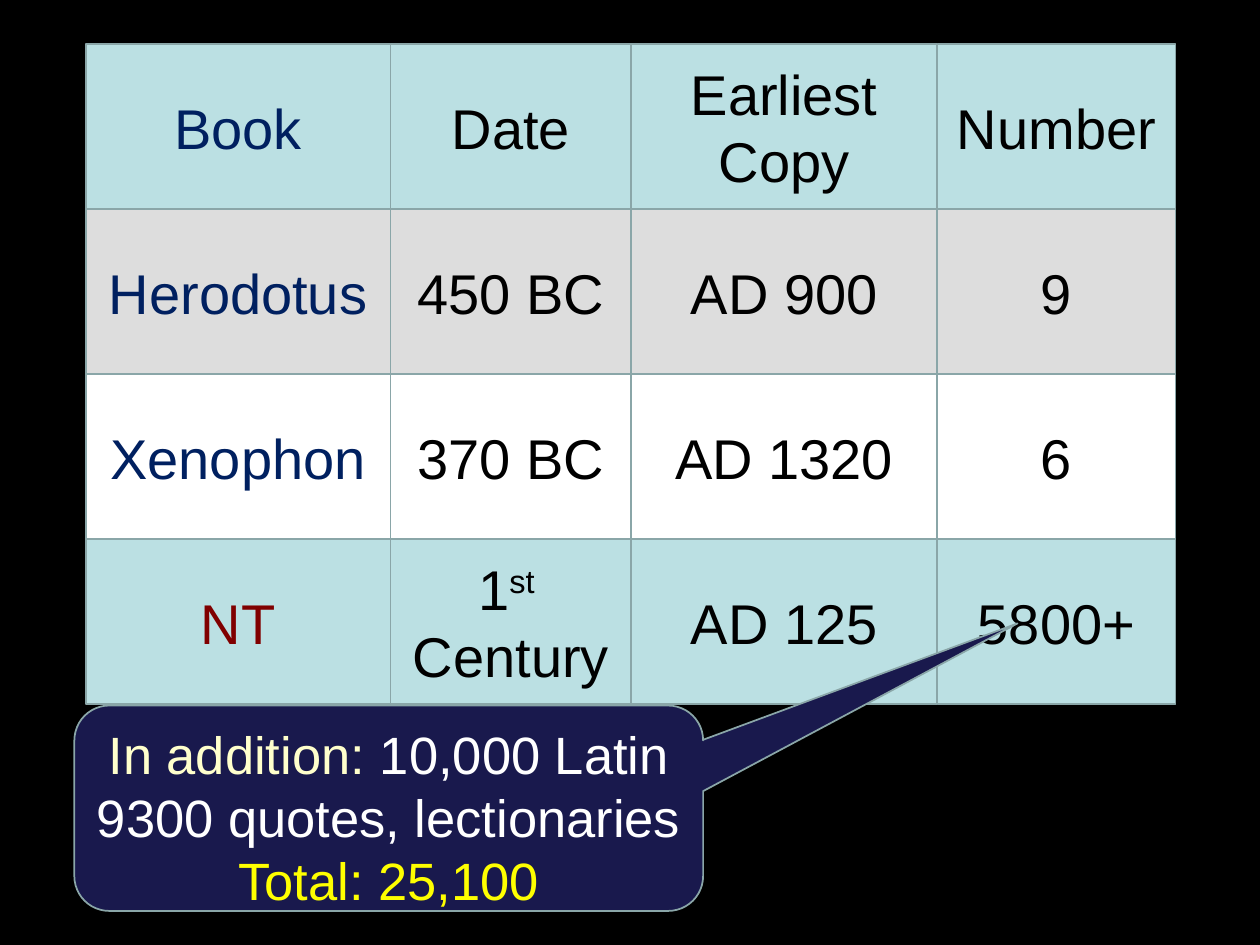
from itertools import accumulate

from pptx import Presentation
from pptx.dml.color import RGBColor
from pptx.enum.shapes import MSO_SHAPE
from pptx.enum.text import MSO_ANCHOR, PP_ALIGN
from pptx.util import Inches, Pt

COLORS = {
    "background": "000000", "teal": "BBE0E3", "gray": "DDDDDD", "white": "FFFFFF",
    "border": "8AA6A8", "black": "000000", "navy": "002060", "maroon": "800000",
    "callout": "19194D", "cream": "FFFFCC", "yellow": "FFFF00",
}


def rgb(name):
    return RGBColor.from_string(COLORS[name])


class SlideBuilder:
    """Holds the text style and the current slide."""

    font_name = "Arial"

    def __init__(self, slide):
        self.slide = slide

    def background(self, color):
        fill = self.slide.background.fill
        fill.solid()
        fill.fore_color.rgb = rgb(color)

    def box(self, kind, left, top, width, height, fill, anchor, margin=0.1):
        shape = self.slide.shapes.add_shape(
            kind, Inches(left), Inches(top), Inches(width), Inches(height))
        shape.shadow.inherit = False
        shape.fill.solid()
        shape.fill.fore_color.rgb = rgb(fill)
        shape.line.color.rgb = rgb("border")
        shape.line.width = Pt(1)
        frame_format = {
            "word_wrap": True, "vertical_anchor": anchor,
            "margin_left": Inches(margin), "margin_right": Inches(margin),
        }
        for name, value in frame_format.items():
            setattr(shape.text_frame, name, value)
        return shape

    def text(self, shape, lines, size):
        """Each line is a list of (text, color, baseline); text "\\n" breaks the line."""
        frame = shape.text_frame
        for index, runs in enumerate(lines):
            paragraph = frame.add_paragraph() if index else frame.paragraphs[0]
            paragraph.alignment = PP_ALIGN.CENTER
            for content, color, baseline in runs:
                if content == "\n":
                    paragraph.add_line_break()
                    continue
                run = paragraph.add_run()
                run.text = content
                font_format = {"name": self.font_name, "size": Pt(size)}
                for name, value in font_format.items():
                    setattr(run.font, name, value)
                run.font.color.rgb = rgb(color)
                if baseline:
                    run._r.get_or_add_rPr().set("baseline", str(baseline * 1000))

    def cell(self, left, top, width, height, fill, runs):
        shape = self.box(MSO_SHAPE.RECTANGLE, left, top, width, height,
                         fill, MSO_ANCHOR.MIDDLE)
        self.text(shape, [runs], 32)

    def callout(self, left, top, width, height, fill, adjustments, lines):
        shape = self.box(MSO_SHAPE.ROUNDED_RECTANGULAR_CALLOUT, left, top, width,
                         height, fill, MSO_ANCHOR.TOP, margin=0.05)
        for index, value in enumerate(adjustments):
            shape.adjustments[index] = value
        self.text(shape, lines, 30)


# Grid of manuscripts: row fill, colour of the book, then the cells
GRID_LEFT, GRID_TOP, ROW_HEIGHT = 0.68, 0.35, 1.31
COLUMN_WIDTHS = [2.42, 1.91, 2.43, 1.89]
FIRST_CENTURY = [("1", "black", 0), ("st ", "black", 30),
                 ("\n", "black", 0), ("Century", "black", 0)]
ROWS = [
    ("teal", "navy", ["Book", "Date", "Earliest Copy", "Number"]),
    ("gray", "navy", ["Herodotus", "450 BC", "AD 900", "9"]),
    ("white", "navy", ["Xenophon", "370 BC", "AD 1320", "6"]),
    ("teal", "maroon", ["NT", FIRST_CENTURY, "AD 125", "5800+"]),
]
CALLOUT_LINES = [
    [("In addition: ", "cream", 0), ("10,000 Latin", "white", 0)],
    [("9300 quotes, lectionaries", "white", 0)],
    [("Total: 25,100", "yellow", 0)],
]


def main():
    presentation = Presentation()
    presentation.slide_width = Inches(10)
    presentation.slide_height = Inches(7.5)
    builder = SlideBuilder(presentation.slides.add_slide(presentation.slide_layouts[6]))
    builder.background("background")

    # Grid cells
    column_lefts = list(accumulate(COLUMN_WIDTHS[:-1], initial=GRID_LEFT))
    for row, (fill, book_color, cells) in enumerate(ROWS):
        top = GRID_TOP + row * ROW_HEIGHT
        for column, content in enumerate(cells):
            color = "black" if column else book_color
            runs = [(content, color, 0)] if isinstance(content, str) else content
            builder.cell(column_lefts[column], top, COLUMN_WIDTHS[column],
                         ROW_HEIGHT, fill, runs)

    # Callout pointing at the number of NT copies
    builder.callout(0.59, 5.6, 4.99, 1.63, "callout", [1.0, -0.9, 0.17], CALLOUT_LINES)

    presentation.save("out.pptx")


if __name__ == "__main__":
    main()
